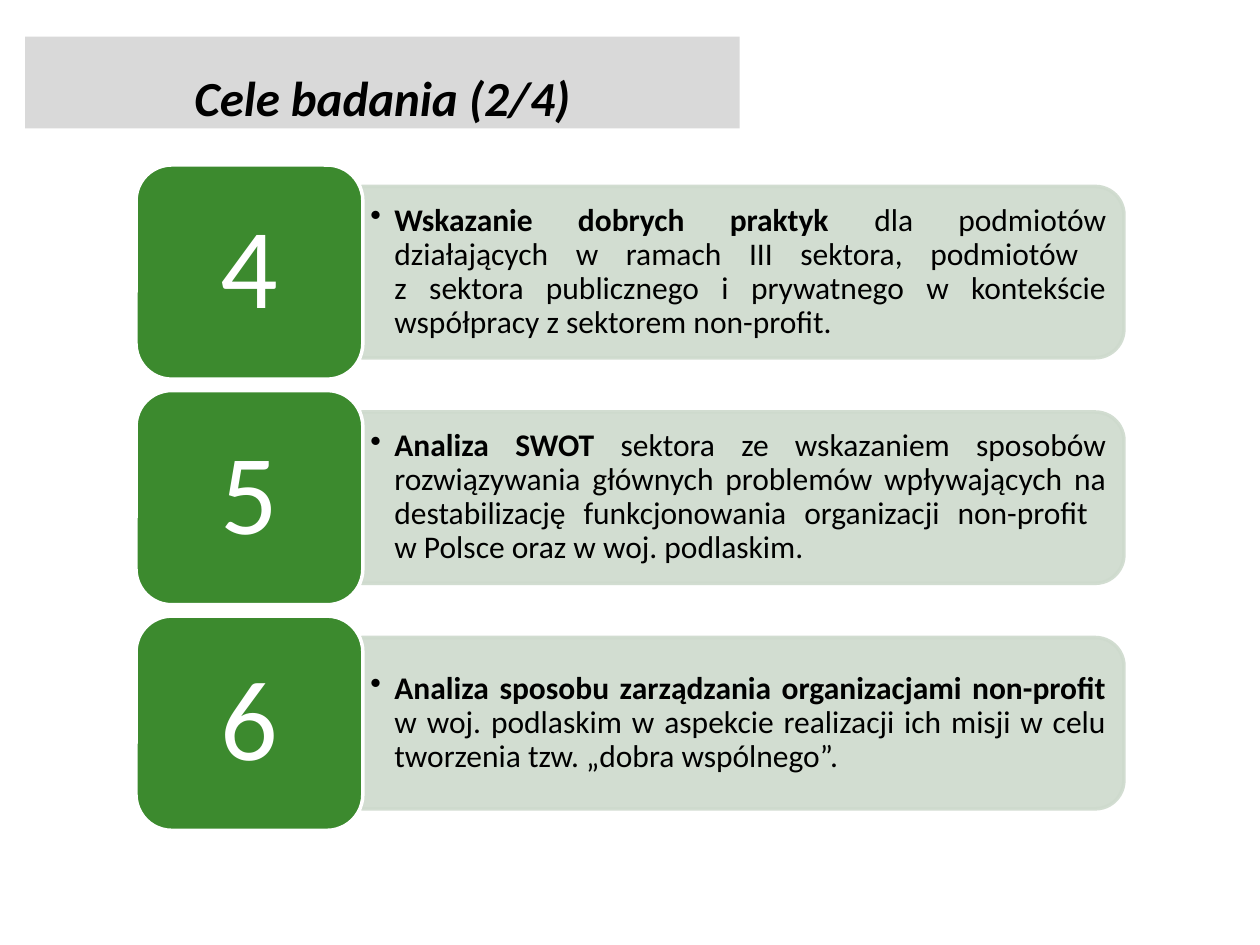
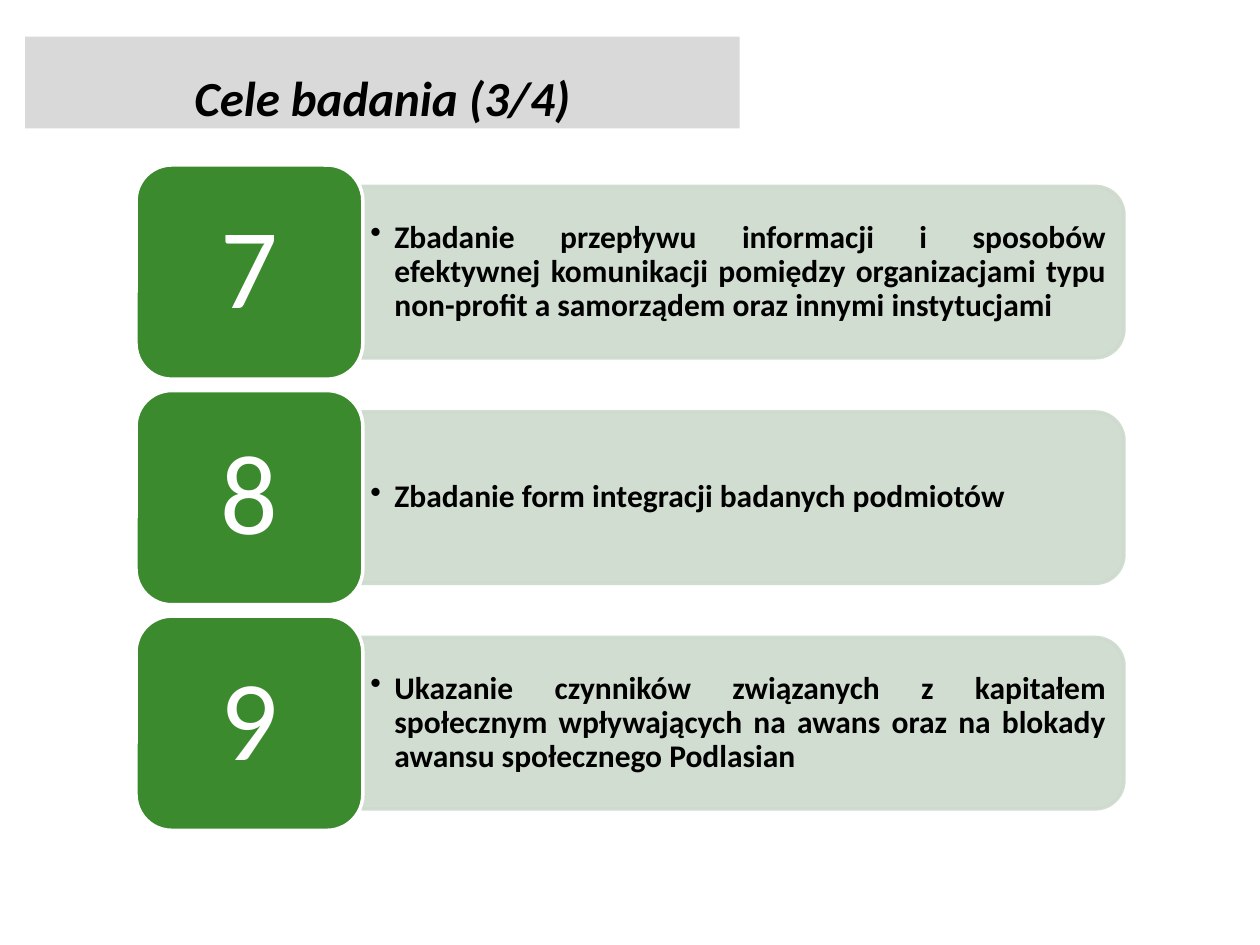
from lxml.etree import SubElement
from pptx import Presentation
from pptx.dml.color import RGBColor
from pptx.enum.shapes import MSO_SHAPE as Geo
from pptx.enum.text import MSO_ANCHOR as Anchor, MSO_AUTO_SIZE as Fit, PP_ALIGN as Align
from pptx.oxml.ns import qn
from pptx.util import Inches, Pt

# Shared style
FONT = "Calibri"
BLACK, WHITE, GREY = "000000", "FFFFFF", "D9D9D9"
GREEN, PALE = "3C8A2E", "CEDACD"

# Row grid
TOP, STEP = 1.31, 1.79
TILE_X, TILE_W, TILE_H = 1.08, 1.8, 1.7
BAR_X, BAR_W, BAR_H = 2.87, 6.05, 1.36
TEXT_W, TEXT_H = 5.98, 1.23
INDENT = 0.19

# Title, first number, goals as (bold part, plain part)
SLIDES = [
    ("Cele badania (2/4)", 4, [
        ("Wskazanie dobrych praktyk ",
         "dla podmiotów działających w ramach III sektora, podmiotów \n"
         "z sektora publicznego i prywatnego w kontekście współpracy "
         "z sektorem non-profit."),
        ("Analiza SWOT ",
         "sektora ze wskazaniem sposobów rozwiązywania głównych problemów "
         "wpływających na destabilizację funkcjonowania organizacji non-profit \n"
         "w Polsce oraz w woj. podlaskim."),
        ("Analiza sposobu zarządzania organizacjami non-profit ",
         "w woj. podlaskim w aspekcie realizacji ich misji w celu tworzenia "
         "tzw. „dobra wspólnego”."),
    ]),
    ("Cele badania (3/4)", 7, [
        ("Zbadanie przepływu informacji i sposobów efektywnej komunikacji "
         "pomiędzy organizacjami typu non-profit a samorządem oraz innymi "
         "instytucjami", ""),
        ("Zbadanie form integracji badanych podmiotów", ""),
        ("Ukazanie czynników związanych z kapitałem społecznym wpływających "
         "na awans oraz na blokady awansu społecznego Podlasian", ""),
    ]),
]


def rgb(code):
    return RGBColor.from_string(code)


class Deck:
    def __init__(self):
        self.prs = Presentation()
        self.prs.slide_width, self.prs.slide_height = Inches(10), Inches(7.5)
        self.slide = None

    def style(self, par, size, color, align, space):
        par.alignment, par.line_spacing = align, space
        font = par.font
        font.name, font.size = FONT, Pt(size)
        font.color.rgb = rgb(color)
        return font

    def frame(self, shape, dx, dy):
        box = shape.text_frame
        box.word_wrap, box.auto_size = True, Fit.NONE
        box.vertical_anchor = Anchor.MIDDLE
        box.margin_left = box.margin_right = Inches(dx)
        box.margin_top = box.margin_bottom = Inches(dy)
        return box

    def title(self, text):
        self.slide = self.prs.slides.add_slide(self.prs.slide_layouts[5])
        head = self.slide.shapes.title
        head.left, head.top = Inches(0.2), Inches(0.29)
        head.width, head.height = Inches(5.67), Inches(0.73)
        head.fill.solid()
        head.fill.fore_color.rgb = rgb(GREY)
        box = self.frame(head, 0.1, 0.05)
        box.text = text
        font = self.style(box.paragraphs[0], 28, BLACK, Align.CENTER, 1.5)
        font.bold = font.italic = True

    def shape(self, geo, x, y, w, h, fill, line):
        item = self.slide.shapes.add_shape(
            geo, Inches(x), Inches(y), Inches(w), Inches(h))
        item.shadow.inherit = False
        item.fill.solid()
        item.fill.fore_color.rgb = rgb(fill)
        item.line.color.rgb = rgb(line)
        item.line.width = Pt(2)
        return item

    def bar(self, mid):
        # Upright shape turned a quarter, so its rounded end faces right
        x = BAR_X + (BAR_W - BAR_H) / 2
        bar = self.shape(Geo.ROUND_2_SAME_RECTANGLE, x, mid - BAR_W / 2,
                         BAR_H, BAR_W, PALE, PALE)
        bar.rotation = 90
        for color in bar.element.spPr.iter(qn("a:srgbClr")):
            SubElement(color, qn("a:alpha"), val="90000")

    def tile(self, y, num):
        tile = self.shape(Geo.ROUNDED_RECTANGLE, TILE_X, y, TILE_W, TILE_H,
                          GREEN, WHITE)
        box = self.frame(tile, 0.27, 0.14)
        box.text = str(num)
        self.style(box.paragraphs[0], 65, WHITE, Align.CENTER, 0.9)

    def goal(self, mid, bold, plain):
        item = self.slide.shapes.add_textbox(
            Inches(BAR_X), Inches(mid - TEXT_H / 2), Inches(TEXT_W), Inches(TEXT_H))
        par = self.frame(item, 0.07, 0.04).paragraphs[0]
        props = par._p.get_or_add_pPr()
        props.set("marL", str(Inches(INDENT)))
        props.set("indent", str(-Inches(INDENT)))
        SubElement(props, qn("a:buChar"), char="•")
        self.style(par, 18, BLACK, Align.JUSTIFY, 0.9)
        run = par.add_run()
        run.text, run.font.bold = bold, True
        for i, part in enumerate(plain.split("\n") if plain else []):
            if i:
                par.add_line_break()
            par.add_run().text = part

    def row(self, i, num, bold, plain):
        y = TOP + i * STEP
        mid = y + TILE_H / 2
        self.bar(mid)
        self.goal(mid, bold, plain)
        self.tile(y, num)


def main():
    deck = Deck()
    for title, first, goals in SLIDES:
        deck.title(title)
        for i, (bold, plain) in enumerate(goals):
            deck.row(i, first + i, bold, plain)
    deck.prs.save("out.pptx")


if __name__ == "__main__":
    main()
